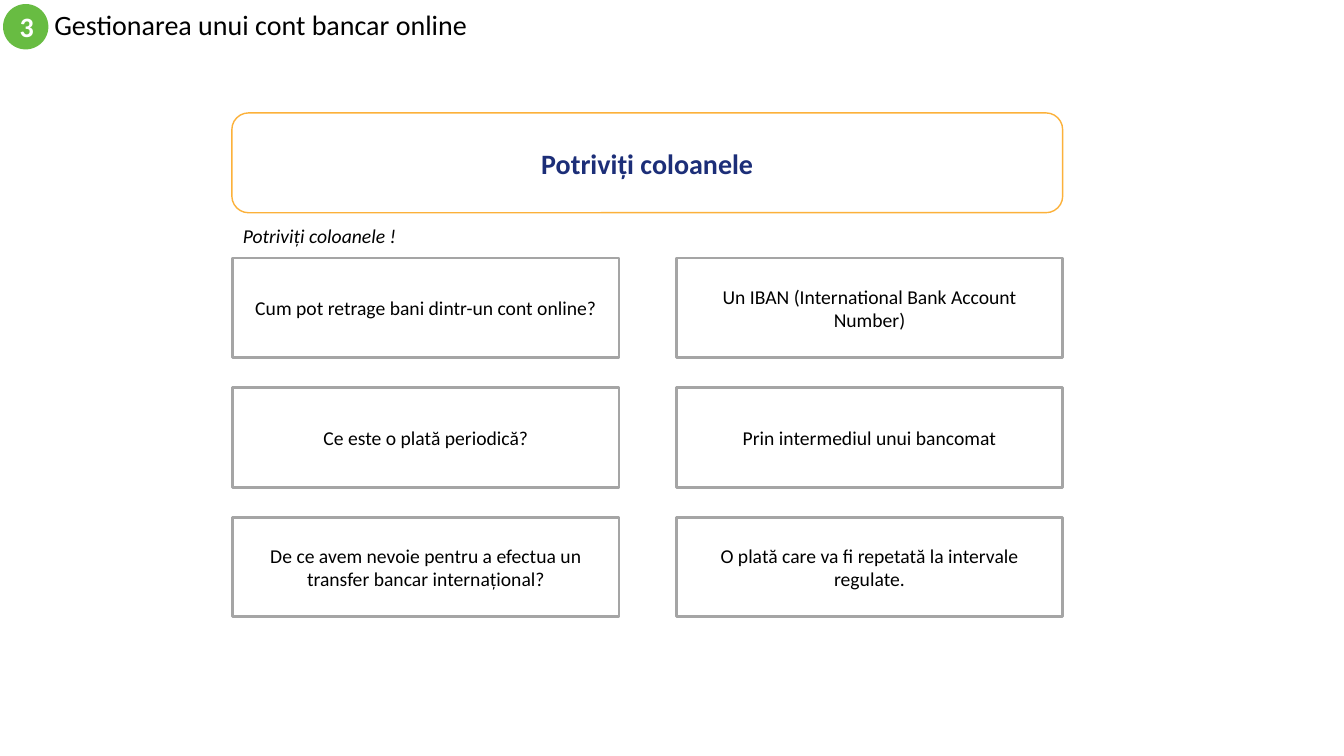
from dataclasses import dataclass
from pptx import Presentation
from pptx.dml.color import RGBColor as RGB
from pptx.enum.shapes import MSO_SHAPE as SHAPE
from pptx.enum.text import MSO_ANCHOR as ANCHOR, PP_ALIGN as ALIGN
from pptx.util import Inches, Pt


@dataclass(frozen=True)
class Theme:
    font: str = "Calibri"
    large: int = 20
    small: int = 14
    black: str = "000000"
    white: str = "FFFFFF"
    green: str = "68BC42"
    orange: str = "FCB13A"
    navy: str = "1C2E78"
    gray: str = "A5A5A5"


theme = Theme()


def write(shape, text, size, color, align=ALIGN.LEFT, bold=False, italic=False):
    frame = shape.text_frame
    frame.text = text
    frame.word_wrap = True
    frame.vertical_anchor = ANCHOR.MIDDLE
    par = frame.paragraphs[0]
    par.alignment = align
    font = par.runs[0].font
    font.name, font.size = theme.font, Pt(size)
    font.bold, font.italic = bold, italic
    font.color.rgb = RGB.from_string(color)
    return frame


def draw(kind, left, top, width, height, fill, line=None, weight=1):
    """Add a filled shape, with no outline unless a line colour is given."""
    shape = slide.shapes.add_shape(
        kind, Inches(left), Inches(top), Inches(width), Inches(height))
    shape.shadow.inherit = False
    shape.fill.solid()
    shape.fill.fore_color.rgb = RGB.from_string(fill)
    if line:
        shape.line.color.rgb = RGB.from_string(line)
        shape.line.width = Pt(weight)
    else:
        shape.line.fill.background()
    return shape


deck = Presentation()
deck.slide_width, deck.slide_height = Inches(13.33), Inches(7.5)
slide = deck.slides.add_slide(deck.slide_layouts[6])

# Header
title = slide.shapes.add_textbox(Inches(0.44), Inches(0.04), Inches(8), Inches(0.45))
frame = write(title, "Gestionarea unui cont bancar online", theme.large, theme.black)
frame.paragraphs[0].line_spacing = 0.9

badge = draw(SHAPE.OVAL, 0.03, 0.04, 0.45, 0.45, theme.green)
write(badge, "3", theme.large, theme.white, ALIGN.CENTER, bold=True)

# Task
banner = draw(SHAPE.ROUNDED_RECTANGLE, 2.3, 1.12, 8.24, 0.99, theme.white, theme.orange)
write(banner, "Potriviți coloanele", theme.large, theme.navy, ALIGN.CENTER, bold=True)

hint = slide.shapes.add_textbox(Inches(2.31), Inches(2.17), Inches(1.74), Inches(0.34))
frame = write(hint, "Potriviți coloanele !", theme.small, theme.black, italic=True)
frame.word_wrap = False

# Two columns to match
pairs = [
    ("Cum pot retrage bani dintr-un cont online?",
     "Un IBAN (International Bank Account Number)"),
    ("Ce este o plată periodică?",
     "Prin intermediul unui bancomat"),
    ("De ce avem nevoie pentru a efectua un transfer bancar internațional?",
     "O plată care va fi repetată la intervale regulate."),
]
for row, pair in enumerate(pairs):
    for col, text in enumerate(pair):
        card = draw(SHAPE.RECTANGLE, 2.31 + 4.4 * col, 2.56 + 1.285 * row,
                    3.83, 0.99, theme.white, theme.gray, 2)
        frame = write(card, text, theme.small, theme.black, ALIGN.CENTER)
        frame.margin_left = frame.margin_right = Inches(0.15)

deck.save("out.pptx")
